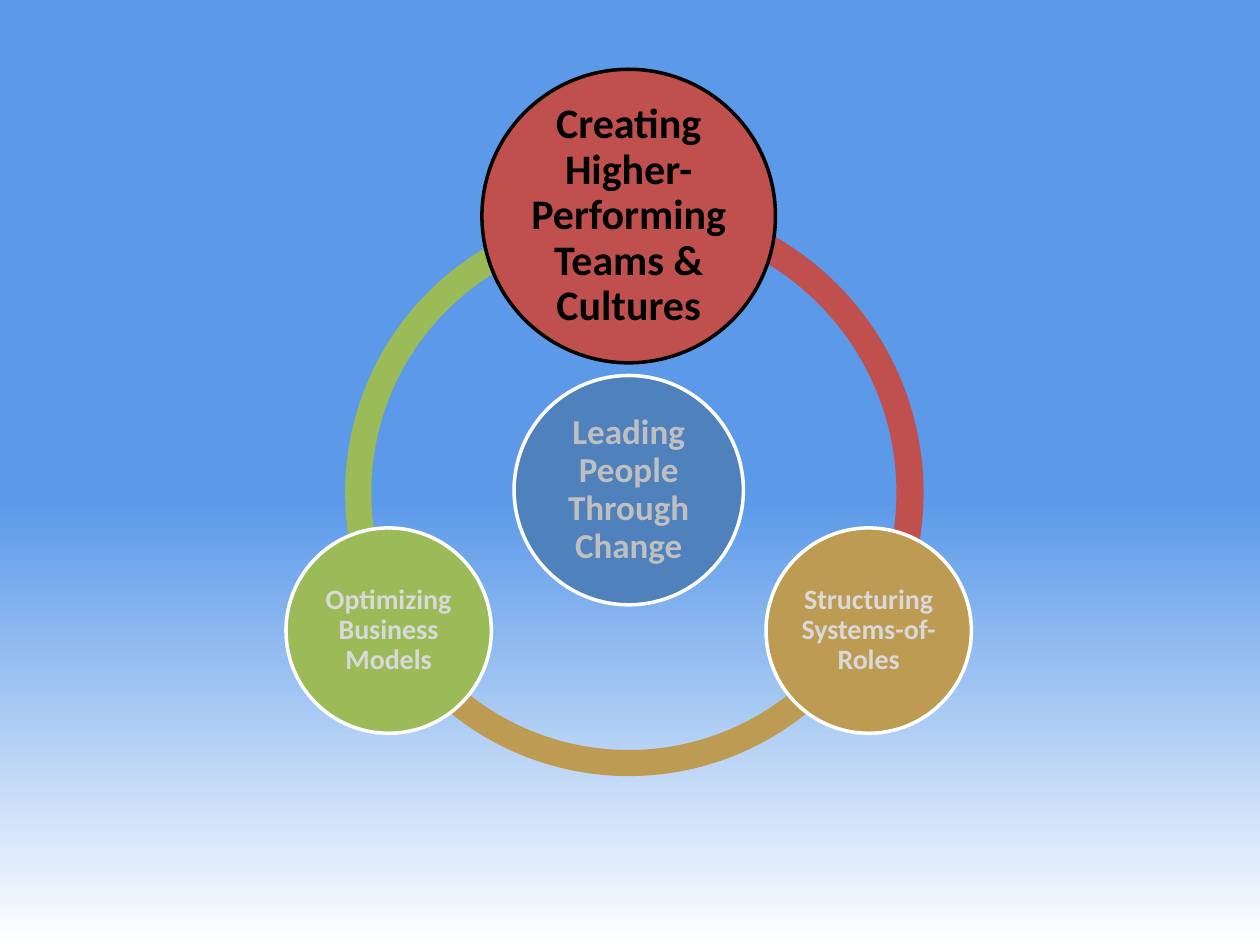
from typing import NamedTuple

import pptx
import pptx.dml.color
import pptx.enum.shapes
import pptx.enum.text
import pptx.util
from pptx.util import Inches

COLORS = {
    "sky": "5C9AE9", "white": "FFFFFF", "black": "000000",
    "green": "9BBB59", "gold": "BD9B53", "red": "C0504D", "blue": "4F81BD",
    "gray": "BFBFBF", "light": "D9D9D9",
}
FONT = "Calibri"
CENTER_X = 4.99
ARC_Y = 3.91
SIDE_OFFSET = 1.905
SIDE_Y = 5.005
ARC_THICKNESS = 0.046
ADJ_PER_DEGREE = 0.6


class Arc(NamedTuple):
    start: int
    end: int
    diameter: float
    fill: str


class Circle(NamedTuple):
    text: str
    x: float
    y: float
    diameter: float
    fill: str
    line: str
    color: str
    size: int
    inset: float


ARCS = [
    Arc(150, 270, 4.5, "green"),
    Arc(30, 150, 4.5, "gold"),
    Arc(270, 30, 4.68, "red"),
]
CIRCLES = [
    Circle("Leading People Through Change", CENTER_X, 3.89, 1.82,
           "blue", "white", "gray", 20, 0.03),
    Circle("Creating Higher-Performing Teams & Cultures", CENTER_X, 1.715, 2.33,
           "red", "black", "black", 24, 0.03),
    Circle("Structuring Systems-of-Roles", CENTER_X + SIDE_OFFSET, SIDE_Y, 1.63,
           "gold", "white", "light", 16, 0.02),
    Circle("Optimizing Business Models", CENTER_X - SIDE_OFFSET, SIDE_Y, 1.63,
           "green", "white", "light", 16, 0.02),
]


def rgb(name: str) -> pptx.dml.color.RGBColor:
    return pptx.dml.color.RGBColor.from_string(COLORS[name])


def add_centered(s, kind, x: float, y: float, diameter: float, fill: str):
    sp = s.shapes.add_shape(
        kind, Inches(x - diameter / 2), Inches(y - diameter / 2),
        Inches(diameter), Inches(diameter))
    sp.shadow.inherit = False
    sp.fill.solid()
    sp.fill.fore_color.rgb = rgb(fill)
    return sp


def draw_arc(s, arc: Arc) -> None:
    sp = add_centered(s, pptx.enum.shapes.MSO_SHAPE.BLOCK_ARC,
                      CENTER_X, ARC_Y, arc.diameter, arc.fill)
    sp.line.fill.background()
    sp.adjustments[0] = arc.start * ADJ_PER_DEGREE
    sp.adjustments[1] = arc.end * ADJ_PER_DEGREE
    sp.adjustments[2] = ARC_THICKNESS


def draw_circle(s, circle: Circle) -> None:
    sp = add_centered(s, pptx.enum.shapes.MSO_SHAPE.OVAL,
                      circle.x, circle.y, circle.diameter, circle.fill)
    sp.line.color.rgb = rgb(circle.line)
    sp.line.width = pptx.util.Pt(2)
    tf = sp.text_frame
    tf.word_wrap = True
    tf.vertical_anchor = pptx.enum.text.MSO_ANCHOR.MIDDLE
    tf.margin_left = tf.margin_right = Inches(circle.inset)
    tf.margin_top = tf.margin_bottom = Inches(circle.inset)
    p = tf.paragraphs[0]
    p.alignment = pptx.enum.text.PP_ALIGN.CENTER
    p.line_spacing = 0.9
    r = p.add_run()
    r.text = circle.text
    r.font.name = FONT
    r.font.size = pptx.util.Pt(circle.size)
    r.font.bold = True
    r.font.color.rgb = rgb(circle.color)


def paint_background(s) -> None:
    fill = s.background.fill
    fill.gradient()
    fill.gradient_angle = 270
    for stop, (position, color) in zip(
            fill.gradient_stops, [(0.53, "sky"), (1.0, "white")]):
        stop.position = position
        stop.color.rgb = rgb(color)


def main() -> None:
    prs = pptx.Presentation()
    prs.slide_width = Inches(10)
    prs.slide_height = Inches(7.5)
    s = prs.slides.add_slide(prs.slide_layouts[6])
    paint_background(s)
    for arc in ARCS:
        draw_arc(s, arc)
    for circle in CIRCLES:
        draw_circle(s, circle)
    prs.save("out.pptx")


if __name__ == "__main__":
    main()
